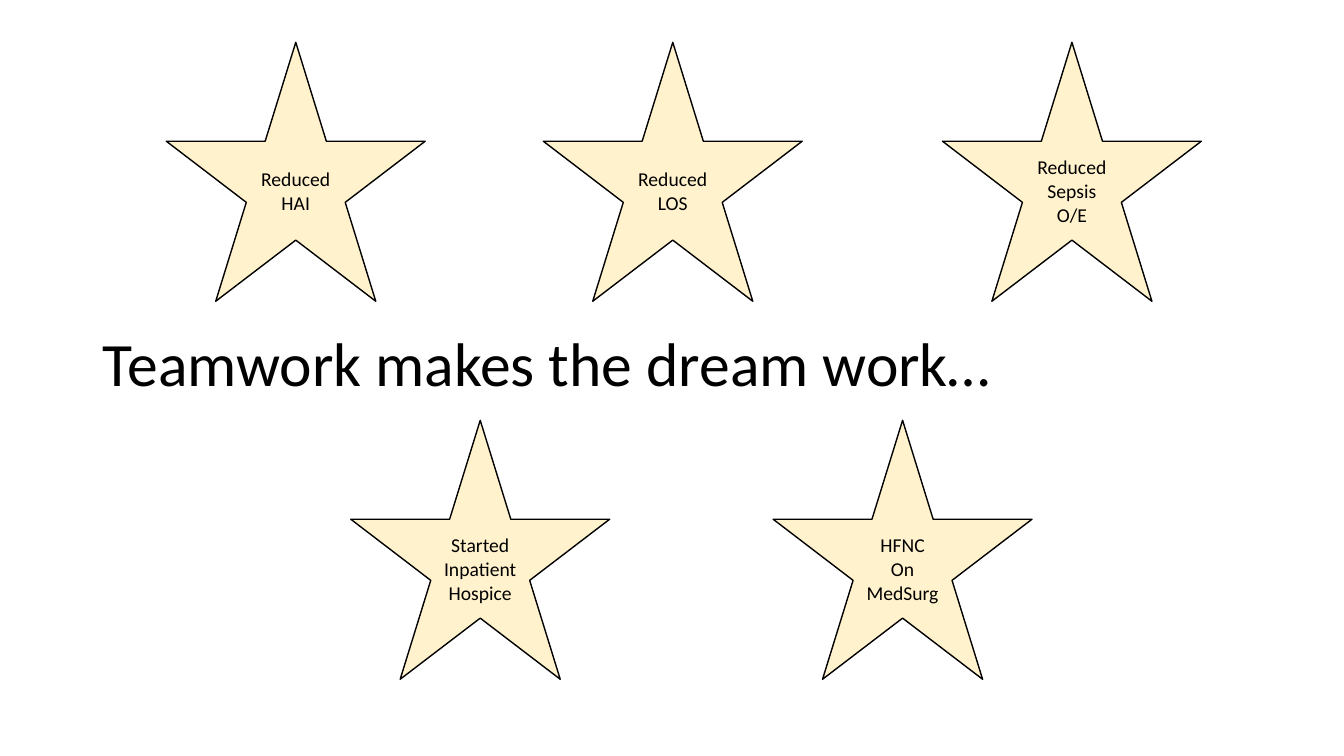
from pptx import Presentation
from pptx.dml.color import RGBColor
from pptx.enum import shapes, text
from pptx.util import Pt

# Content: row top, then (left, lines) of each star
TITLE = "Teamwork makes the dream work…"
ROWS = [
    (30.24, [(118.8, ["Reduced HAI"]),
             (388.08, ["Reduced LOS"]),
             (673.2, ["Reduced", "Sepsis", "O/E"])]),
    (300.24, [(250.56, ["Started Inpatient", "Hospice"]),
              (552.24, ["HFNC", "On", "MedSurg"])]),
]

# Format
BLACK = RGBColor(0, 0, 0)
CREAM = RGBColor(0xFF, 0xF2, 0xCC)
SIDE = 185
BOX = {"left": Pt(66.24), "top": Pt(209.52), "width": Pt(828), "height": Pt(104.4)}
FRAME = {"word_wrap": True, "auto_size": text.MSO_AUTO_SIZE.NONE,
         "vertical_anchor": text.MSO_ANCHOR.MIDDLE}
HEAD = {"alignment": text.PP_ALIGN.LEFT, "line_spacing": 0.9}
LABEL = {"alignment": text.PP_ALIGN.CENTER}


def apply(item, values):
    for name, value in values.items():
        setattr(item, name, value)


def write(shape, lines, size, form):
    frame = shape.text_frame
    frame.text = "\n".join(lines)
    apply(frame, FRAME)
    for para in frame.paragraphs:
        apply(para, form)
        for run in para.runs:
            apply(run.font, {"name": "Calibri", "size": Pt(size)})
            run.font.color.rgb = BLACK


def add_star(slide, left, top, lines):
    star = slide.shapes.add_shape(shapes.MSO_SHAPE.STAR_5_POINT,
                                  Pt(left), Pt(top), Pt(SIDE), Pt(SIDE))
    star.shadow.inherit = False
    star.fill.solid()
    star.fill.fore_color.rgb = CREAM
    star.line.color.rgb = BLACK
    star.line.width = Pt(1)
    write(star, lines, 14, LABEL)


def main():
    deck = Presentation()
    apply(deck, {"slide_width": Pt(960), "slide_height": Pt(540)})
    slide = deck.slides.add_slide(deck.slide_layouts[5])

    # Title
    title = slide.shapes.title
    apply(title, BOX)
    write(title, [TITLE], 44, HEAD)

    # Stars
    for top, stars in ROWS:
        for left, lines in stars:
            add_star(slide, left, top, lines)

    deck.save("out.pptx")


if __name__ == "__main__":
    main()
